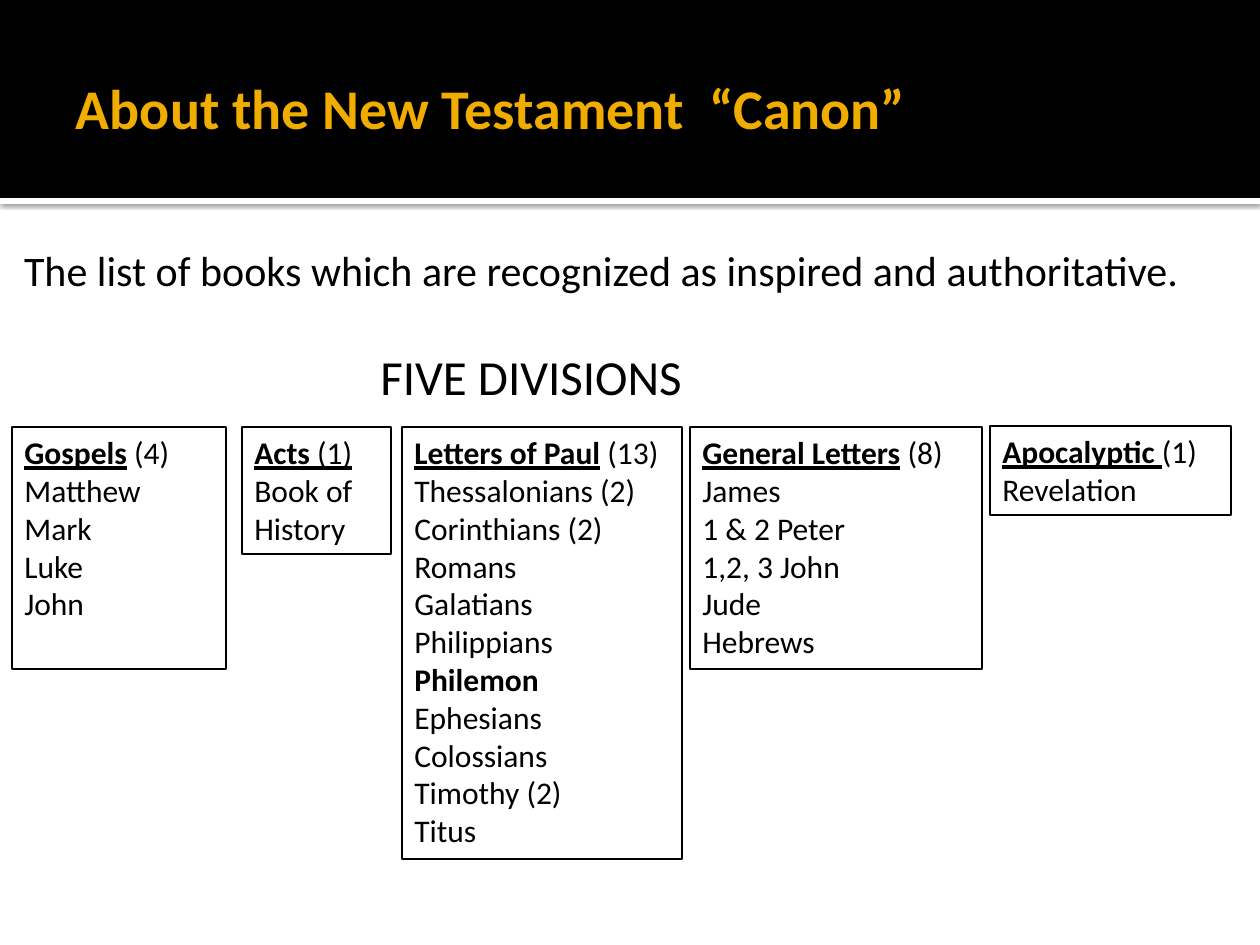
from lxml import etree
from pptx import Presentation
from pptx.dml.color import RGBColor
from pptx.enum.shapes import MSO_SHAPE
from pptx.enum.text import MSO_ANCHOR, MSO_AUTO_SIZE, PP_ALIGN
from pptx.oxml import parse_xml
from pptx.util import Pt

RECT = MSO_SHAPE.RECTANGLE
TOP, MIDDLE = MSO_ANCHOR.TOP, MSO_ANCHOR.MIDDLE
NO_FIT = MSO_AUTO_SIZE.NONE
LEFT = PP_ALIGN.LEFT
PX = 914400 / 126
A = "http://schemas.openxmlformats.org/drawingml/2006/main"

THEME = {
    "font": "Calibri",
    "black": RGBColor(0, 0, 0),
    "white": RGBColor(255, 255, 255),
    "gold": RGBColor(0xF0, 0xAD, 0x00),
    "title": Pt(32),
    "body": Pt(24),
    "heading": Pt(28),
    "list": Pt(18),
    "border": Pt(0.75),
}

DIVISIONS = [
    ((12, 427, 214, 242), "Gospels", " (4)", ["Matthew", "Mark", "Luke", "John"]),
    ((242, 427, 149, 127), "Acts ", "(1)", ["Book of History"]),
    ((402, 427, 280, 432), "Letters of Paul", " (13)",
     ["Thessalonians (2)", "Corinthians (2)", "Romans", "Galatians", "Philippians",
      "Philemon", "Ephesians", "Colossians", "Timothy (2)", "Titus"]),
    ((690, 427, 292, 242), "General Letters", " (8)",
     ["James", "1 & 2 Peter", "1,2, 3 John", "Jude", "Hebrews"]),
    ((990, 426, 241, 89), "Apocalyptic ", "(1)", ["Revelation"]),
]


def place(sp, *box):
    sp.left, sp.top, sp.width, sp.height = [round(v * PX) for v in box]


def style(p, size, color="black", bold=False):
    p.alignment = LEFT
    p.space_before = Pt(0)
    p.font.name = THEME["font"]
    p.font.size = THEME[size]
    p.font.color.rgb = THEME[color]
    p.font.bold = bold


prs = Presentation()
prs.slide_width, prs.slide_height = round(1260 * PX), round(945 * PX)
s = prs.slides.add_slide(prs.slide_layouts[1])

bands = [((0, 198, 1260, 6), "white"), ((0, 0, 1260, 198), "black")]
for z, (box, color) in enumerate(bands):
    sp = s.shapes.add_shape(RECT, 0, 0, 0, 0)
    place(sp, *box)
    sp.shadow.inherit = False
    sp.fill.solid()
    sp.fill.fore_color.rgb = THEME[color]
    sp.line.fill.background()
    s.shapes._spTree.insert(2 + z, sp._element)
    if color == "white":
        effects = sp._element.spPr.find(f"{{{A}}}effectLst")
        effects.append(parse_xml(
            f'<a:outerShdw xmlns:a="{A}" blurRad="{Pt(2.5)}" dist="{Pt(0.8)}" '
            'dir="5400000" algn="t" rotWithShape="0"><a:srgbClr val="000000">'
            '<a:alpha val="60000"/></a:srgbClr></a:outerShdw>'))

sp = s.shapes.title
place(sp, 63, 21, 1134, 173)
tf = sp.text_frame
tf.auto_size = NO_FIT
tf.vertical_anchor = MIDDLE
tf.margin_left = round(13 * PX)
tf.margin_right = round(6 * PX)
tf.text = "About the New Testament  “Canon”"
style(tf.paragraphs[0], "title", "gold", True)

sp = s.placeholders[1]
place(sp, 0, 231, 1260, 703)
tf = sp.text_frame
tf.auto_size = NO_FIT
tf.vertical_anchor = TOP
tf.margin_left = round(8 * PX)
tf.margin_top = round(13 * PX)
tf.text = "The list of books which are recognized as inspired and authoritative."
p = tf.paragraphs[0]
style(p, "body")
pPr = p._p.get_or_add_pPr()
pPr.set("marL", str(round(16 * PX)))
pPr.set("indent", "0")
pPr.insert_element_before(etree.Element(f"{{{A}}}buNone"), "a:tabLst", "a:defRPr", "a:extLst")

for box, name, count, books in DIVISIONS:
    sp = s.shapes.add_textbox(0, 0, 0, 0)
    place(sp, *box)
    sp.line.color.rgb = THEME["black"]
    sp.line.width = THEME["border"]
    tf = sp.text_frame
    tf.word_wrap = True
    p = tf.paragraphs[0]
    style(p, "list")
    r = p.add_run()
    r.text = name
    r.font.bold = r.font.underline = True
    r = p.add_run()
    r.text = count
    r.font.underline = name == "Acts "
    for book in books:
        p = tf.add_paragraph()
        p.text = book
        style(p, "list", bold=book == "Philemon")

sp = s.shapes.add_textbox(0, 0, 0, 0)
place(sp, 368, 340, 389, 72)
tf = sp.text_frame
tf.word_wrap = True
tf.text = "FIVE DIVISIONS"
style(tf.paragraphs[0], "heading")

prs.save("out.pptx")
